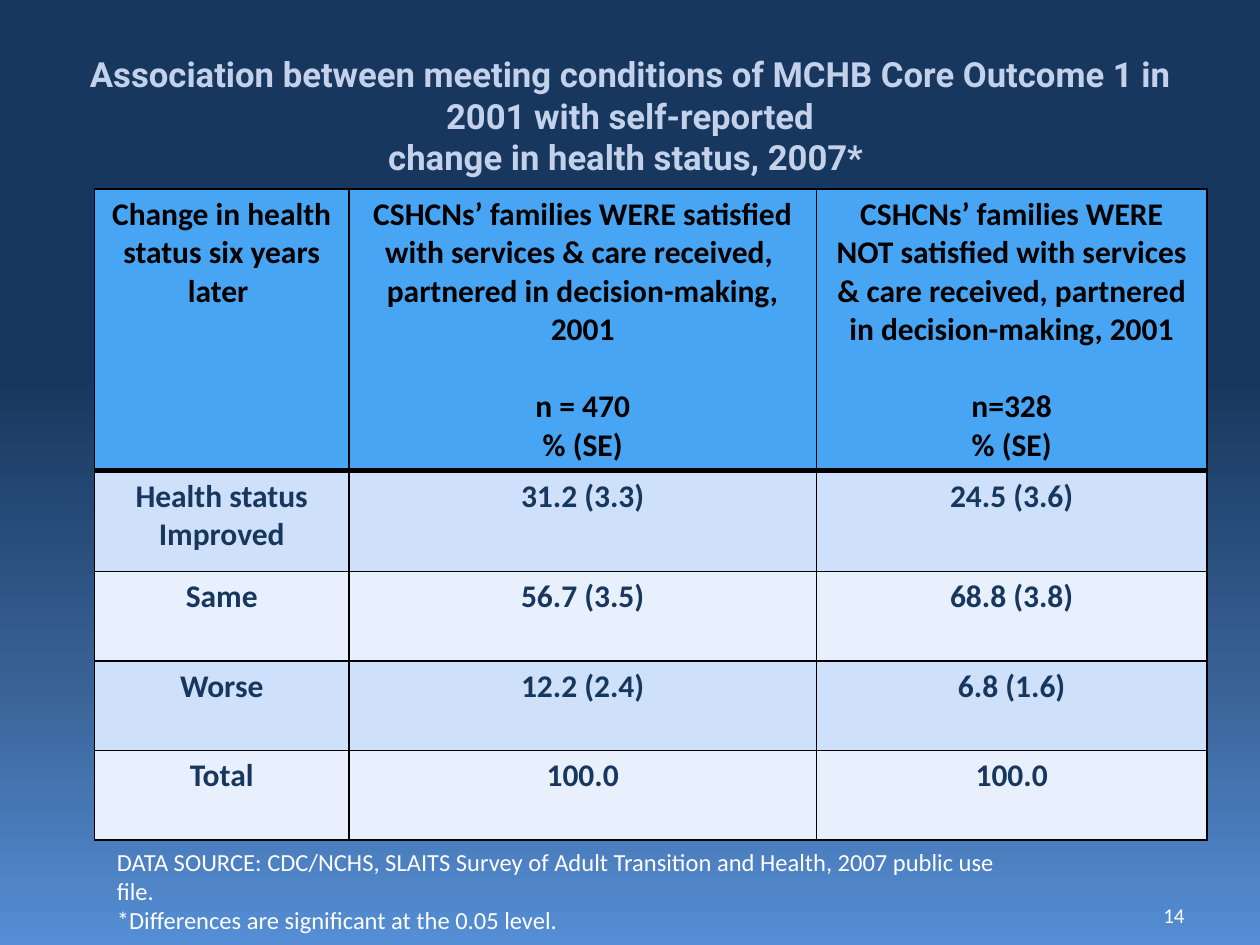
"""Build the slide on core outcome 1 and self-reported change in health status."""
from dataclasses import dataclass

from lxml.etree import SubElement
from pptx import Presentation
from pptx.dml.color import RGBColor
from pptx.enum.text import MSO_ANCHOR as Anchor, MSO_AUTO_SIZE as AutoSize, PP_ALIGN as Align
from pptx.oxml.ns import qn
from pptx.util import Inches, Pt


@dataclass(frozen=True)
class Theme:
    """Colours, fonts and type sizes of the slide."""
    title_font: str = "Roboto"
    body_font: str = "Calibri"
    title: str = "C4D1EB"
    navy: str = "17375E"
    black: str = "000000"
    white: str = "FFFFFF"
    header_fill: str = "47A5F3"
    bands: tuple = ("CFE1FA", "E9F0FD")
    backdrop: tuple = ((0, "17375E"), (40, "17375E"), (70, "375F92"), (100, "558ED5"))
    title_size: float = 19.8
    table_size: float = 18
    note_size: float = 14
    number_size: float = 12


@dataclass(frozen=True)
class Heading:
    """A column heading with its width and the lines set apart below it."""
    label: str
    width: float
    sample: tuple = ()


@dataclass(frozen=True)
class Outcome:
    """A table row with its height."""
    values: tuple
    height: float = 0.71


THEME = Theme()
HEADER_HEIGHT = 2.23
HEADINGS = (
    Heading("Change in health status six years later ", 2.02),
    Heading("CSHCNs’ families WERE satisfied with services & care received,  "
            "partnered in decision-making, 2001", 3.71, ("n = 470", "% (SE)")),
    Heading("CSHCNs’ families WERE NOT satisfied with services & care received, "
            "partnered in decision-making, 2001", 3.1, ("n=328", "% (SE)")),
)
OUTCOMES = (
    Outcome(("Health status Improved", "31.2 (3.3)", "24.5 (3.6)"), 0.8),
    Outcome(("Same", "56.7 (3.5)", "68.8 (3.8)")),
    Outcome(("Worse", "12.2 (2.4)", "6.8 (1.6)")),
    Outcome(("Total", "100.0", "100.0")),
)


def apply(target, **formats) -> None:
    """Set each given format value on the target."""
    for name, value in formats.items():
        setattr(target, name, value)


def style(paragraph, font: str, size: float, color: str, align, bold: bool = False) -> None:
    """Format a paragraph and its text."""
    paragraph.alignment = align
    apply(paragraph.font, name=font, size=Pt(size), bold=bold)
    paragraph.font.color.rgb = RGBColor.from_string(color)


def paint_background(slide) -> None:
    """Fill the slide background with the vertical gradient."""
    fill = slide.background.fill
    fill.gradient()
    fill.gradient_angle = 270
    stops = slide.element.find(".//" + qn("a:gsLst"))
    for stop in list(stops):
        stops.remove(stop)
    for percent, color in THEME.backdrop:
        stop = SubElement(stops, qn("a:gs"), pos=str(percent * 1000))
        SubElement(stop, qn("a:srgbClr"), val=color)


def add_title(slide, text: str) -> None:
    """Place and format the title placeholder."""
    title = slide.shapes.title
    apply(title, left=Inches(0.5), top=Inches(0), width=Inches(9), height=Inches(1.25))
    frame = title.text_frame
    frame.text = text
    apply(frame, word_wrap=True, auto_size=AutoSize.NONE, vertical_anchor=Anchor.TOP,
          margin_top=Inches(0.42), margin_bottom=0)
    style(frame.paragraphs[0], THEME.title_font, THEME.title_size, THEME.title,
          Align.CENTER, True)


def draw_borders(cell, bottom: float) -> None:
    """Draw black lines around a cell, the lower one in its own width."""
    properties = cell._tc.get_or_add_tcPr()
    for side, width in (("L", 1), ("R", 1), ("T", 1), ("B", bottom)):
        line = SubElement(properties, qn("a:ln" + side), w=str(Pt(width)))
        SubElement(SubElement(line, qn("a:solidFill")), qn("a:srgbClr"), val=THEME.black)


def fill_cell(cell, lines: tuple, fill: str, color: str, bottom: float = 1) -> None:
    """Write centred bold lines in a cell, the second one set apart."""
    draw_borders(cell, bottom)
    cell.fill.solid()
    cell.fill.fore_color.rgb = RGBColor.from_string(fill)
    cell.text = "\n".join(lines)
    for index, paragraph in enumerate(cell.text_frame.paragraphs):
        style(paragraph, THEME.body_font, THEME.table_size, color, Align.CENTER, True)
        if index == 1:
            paragraph.space_before = Pt(22)


def add_outcome_table(slide) -> None:
    """Add the table of health status outcomes."""
    heights = [HEADER_HEIGHT] + [outcome.height for outcome in OUTCOMES]
    table = slide.shapes.add_table(
        len(heights), len(HEADINGS), Inches(0.75), Inches(1.5),
        Inches(sum(heading.width for heading in HEADINGS)), Inches(sum(heights))).table
    for row, height in zip(table.rows, heights):
        row.height = Inches(height)
    for column, heading in enumerate(HEADINGS):
        table.columns[column].width = Inches(heading.width)
        fill_cell(table.cell(0, column), (heading.label, *heading.sample),
                  THEME.header_fill, THEME.black, 3)
    for index, outcome in enumerate(OUTCOMES):
        for column, value in enumerate(outcome.values):
            fill_cell(table.cell(index + 1, column), (value,),
                      THEME.bands[index % 2], THEME.navy)


def add_note(slide, box: tuple, text: str, size: float, align, **formats) -> None:
    """Add a white text box."""
    frame = slide.shapes.add_textbox(*map(Inches, box)).text_frame
    frame.text = text
    apply(frame, word_wrap=True, **formats)
    for paragraph in frame.paragraphs:
        style(paragraph, THEME.body_font, size, THEME.white, align)


def main() -> None:
    """Build and save the presentation."""
    deck = Presentation()
    apply(deck, slide_width=Inches(10), slide_height=Inches(7.5))
    slide = deck.slides.add_slide(deck.slide_layouts[5])
    paint_background(slide)
    add_title(slide, "Association between meeting conditions of MCHB Core Outcome 1 in 2001 "
                     "with self-reported\vchange in health status, 2007* ")
    add_outcome_table(slide)
    add_note(slide, (7.17, 7.17, 2.33, 0.18), "14", THEME.number_size, Align.RIGHT,
             vertical_anchor=Anchor.MIDDLE, margin_top=0, margin_bottom=0)
    add_note(slide, (0.83, 6.67, 7.5, 0.57),
             "DATA SOURCE: CDC/NCHS, SLAITS Survey of Adult Transition and Health, "
             "2007 public use file.\n*Differences are significant at the 0.05 level.",
             THEME.note_size, Align.LEFT)
    deck.save("out.pptx")


if __name__ == "__main__":
    main()
